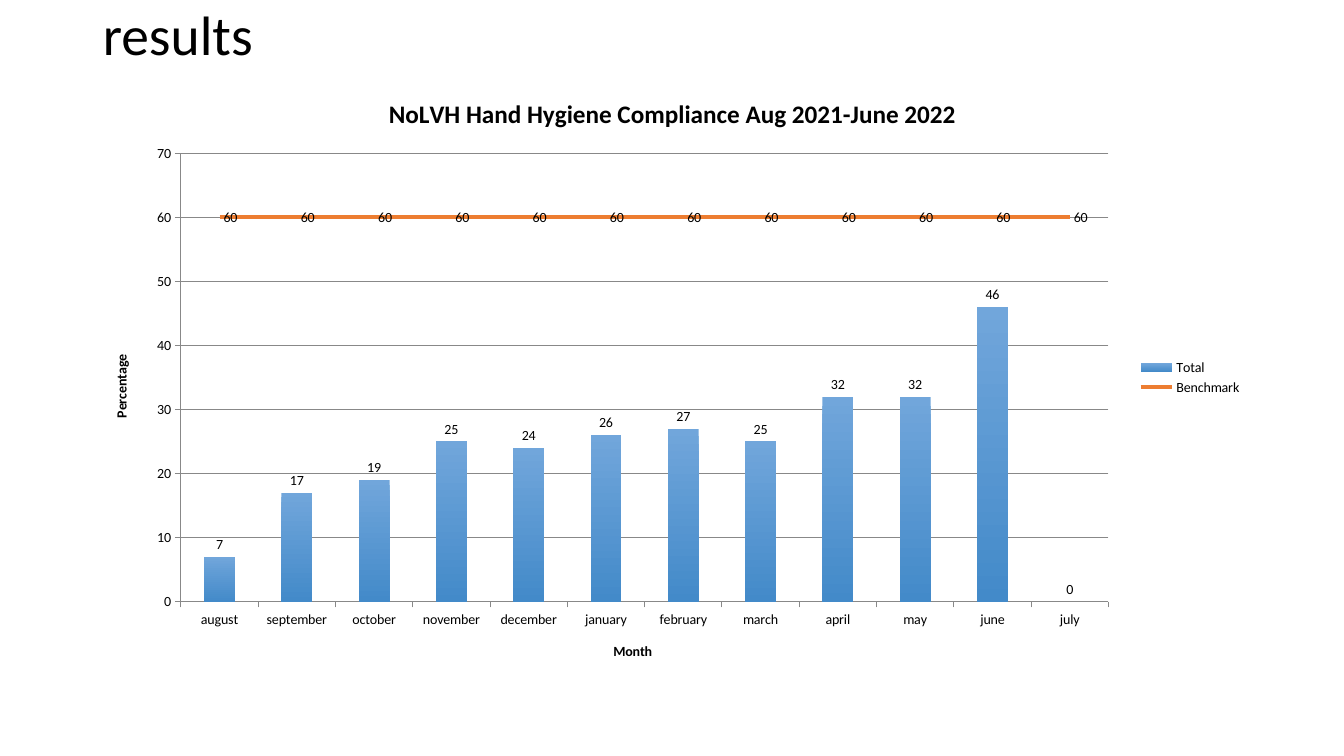
"""Build a slide with a combined chart of hand hygiene compliance."""
from lxml.etree import SubElement
from pptx import Presentation
from pptx.chart.data import CategoryChartData as ChartData
from pptx.dml.color import RGBColor
from pptx.enum.chart import XL_CHART_TYPE as Kind
from pptx.enum.chart import XL_LABEL_POSITION as Place
from pptx.enum.chart import XL_LEGEND_POSITION as Side
from pptx.enum.chart import XL_MARKER_STYLE as Marker
from pptx.enum.chart import XL_TICK_MARK as Tick
from pptx.enum.text import MSO_ANCHOR as Anchor
from pptx.enum.text import PP_ALIGN as Align
from pptx.oxml import parse_xml
from pptx.oxml.ns import nsdecls, qn
from pptx.util import Inches, Pt

TITLE = "results"
HEAD = "NoLVH Hand Hygiene Compliance Aug 2021-June 2022"
MONTHS = ["august", "september", "october", "november", "december", "january",
          "february", "march", "april", "may", "june", "july"]
TOTAL = [7, 17, 19, 25, 24, 26, 27, 25, 32, 32, 46, 0]
GOAL = 60
PLOT = {"x": 0.076, "y": 0.13, "w": 0.8, "h": 0.74}

FONT = "Calibri"
BLACK = RGBColor(0x00, 0x00, 0x00)
GRAY = RGBColor(0x88, 0x88, 0x88)
LIGHT = RGBColor(0x71, 0xA6, 0xDB)
DARK = RGBColor(0x43, 0x8A, 0xC9)
ORANGE = RGBColor(0xED, 0x7D, 0x31)


def style(font, size, bold=False):
    """Set the common font with a size and weight."""
    font.name, font.size, font.bold = FONT, Pt(size), bold
    font.color.rgb = BLACK


def caption(title, text, size):
    """Fill the bold title of a chart or an axis."""
    frame = title.text_frame
    frame.text = text
    style(frame.paragraphs[0].font, size, True)


def label(series, place):
    """Show whole values beside the points of a series."""
    tags = series.data_labels
    tags.show_value = True
    tags.number_format, tags.number_format_is_linked = "0", False
    tags.position = place
    style(tags.font, 10)


def add_line(chart):
    """Move the second series from the bars to a line plot."""
    bars = chart.plots[0]._element
    ser = bars.findall(qn("c:ser"))[1]
    for flag in ser.findall(qn("c:invertIfNegative")):
        ser.remove(flag)
    plot = parse_xml(f'<c:lineChart {nsdecls("c")}><c:grouping val="standard"/>'
                     '<c:varyColors val="0"/></c:lineChart>')
    plot.append(ser)
    SubElement(plot, qn("c:marker")).set("val", "1")
    for axis in bars.findall(qn("c:axId")):
        SubElement(plot, qn("c:axId")).set("val", axis.get("val"))
    bars.addnext(plot)


def set_plot(chart):
    """Fix the inner plot area as shares of the chart."""
    area = chart._chartSpace.find(".//" + qn("c:plotArea"))
    for old in area.findall(qn("c:layout")):
        area.remove(old)
    modes = '<c:xMode val="edge"/><c:yMode val="edge"/>'
    sizes = "".join(f'<c:{key} val="{val}"/>' for key, val in PLOT.items())
    area.insert(0, parse_xml(
        f'<c:layout {nsdecls("c")}><c:manualLayout>'
        f'<c:layoutTarget val="inner"/>{modes}{sizes}'
        '</c:manualLayout></c:layout>'))


def add_chart(slide):
    """Draw the monthly columns and the benchmark line."""
    data = ChartData(number_format="0")
    data.categories = MONTHS
    data.add_series("Total", TOTAL)
    data.add_series("Benchmark", [GOAL] * len(MONTHS))
    chart = slide.shapes.add_chart(
        Kind.COLUMN_CLUSTERED, Inches(0.92), Inches(0.74),
        Inches(11.5), Inches(6.01), data).chart
    style(chart.font, 10)
    caption(chart.chart_title, HEAD, 18)
    add_line(chart)
    set_plot(chart)

    bars, lines = chart.plots
    bars.gap_width, bars.vary_by_categories = 150, False
    total, goal = bars.series[0], lines.series[0]
    fill = total.format.fill
    fill.gradient()
    fill.gradient_angle = 270
    for stop, color in zip(fill.gradient_stops, (LIGHT, DARK)):
        stop.color.rgb = color
    goal.format.line.color.rgb = ORANGE
    goal.format.line.width = Pt(2.75)
    goal.marker.style = Marker.NONE
    goal.smooth = False
    label(total, Place.OUTSIDE_END)
    label(goal, Place.RIGHT)

    for axis, name in ((chart.category_axis, "Month"),
                       (chart.value_axis, "Percentage")):
        caption(axis.axis_title, name, 10)
        axis.major_tick_mark, axis.minor_tick_mark = Tick.OUTSIDE, Tick.NONE
        axis.format.line.color.rgb = GRAY
        style(axis.tick_labels.font, 10)
    scale = chart.value_axis
    scale.minimum_scale, scale.maximum_scale, scale.major_unit = 0, 70, 10
    scale.major_gridlines.format.line.color.rgb = GRAY

    chart.has_legend = True
    chart.legend.position = Side.RIGHT
    chart.legend.include_in_layout = False
    style(chart.legend.font, 10)


def main():
    """Make the slide and save it."""
    deck = Presentation()
    deck.slide_width, deck.slide_height = Inches(13.33), Inches(7.5)
    slide = deck.slides.add_slide(deck.slide_layouts[5])
    title = slide.shapes.title
    title.left, title.top = Inches(0.92), Inches(0)
    title.width, title.height = Inches(11.5), Inches(0.74)
    frame = title.text_frame
    frame.text, frame.vertical_anchor = TITLE, Anchor.MIDDLE
    para = frame.paragraphs[0]
    para.alignment, para.line_spacing = Align.LEFT, 0.9
    style(para.font, 39.6)
    add_chart(slide)
    deck.save("out.pptx")


if __name__ == "__main__":
    main()
